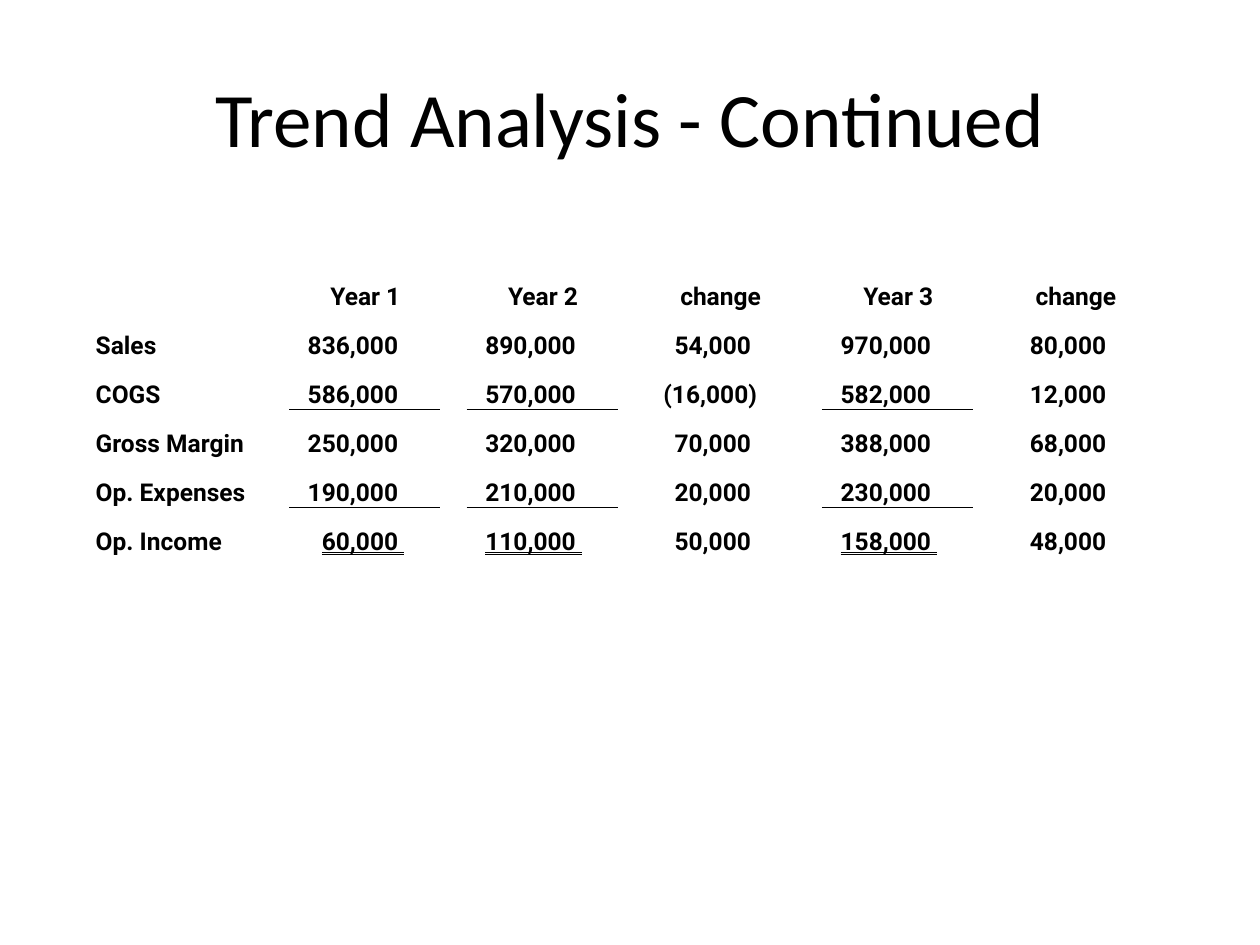
from lxml.etree import Element, SubElement
from pptx import Presentation
from pptx.dml.color import RGBColor
from pptx.enum.text import MSO_ANCHOR, MSO_UNDERLINE, PP_ALIGN
from pptx.oxml.ns import qn
from pptx.util import Inches, Pt

COLORS = {"text": "000000", "rule": "000000"}
HEADINGS = ["Year 1", "Year 2", "change", "Year 3", "change"]
STATEMENT = [
    ("Sales", [836000, 890000, 54000, 970000, 80000]),
    ("COGS", [586000, 570000, -16000, 582000, 12000]),
    ("Gross Margin", [250000, 320000, 70000, 388000, 68000]),
    ("Op. Expenses", [190000, 210000, 20000, 230000, 20000]),
    ("Op. Income", [60000, 110000, 50000, 158000, 48000]),
]
RULED_ROWS = {"COGS", "Op. Expenses"}
LABEL_WIDTH, VALUE_WIDTH, GAP_WIDTH = 1.55, 1.2, 0.21
ROW_HEIGHT = 0.39


def write(cell, text, size=14):
    paragraph = cell.text_frame.paragraphs[0]
    run = paragraph.add_run()
    run.text = text
    run.font.name = "Roboto"
    run.font.size = Pt(size)
    run.font.bold = True
    run.font.color.rgb = RGBColor.from_string(COLORS["text"])
    return paragraph, run


def add_rule(cell, side):
    """Draw a thin line on one side of a cell: a:lnT or a:lnB."""
    line = Element(qn(side), w=str(Pt(0.5)))
    fill = SubElement(line, qn("a:solidFill"))
    SubElement(fill, qn("a:srgbClr"), val=COLORS["rule"])
    cell._tc.get_or_add_tcPr().insert(0, line)


prs = Presentation()
prs.slide_width, prs.slide_height = Inches(10), Inches(7.5)
slide = prs.slides.add_slide(prs.slide_layouts[5])

title = slide.shapes.title
title.left, title.top = Inches(0.5), Inches(0.3)
title.width, title.height = Inches(9), Inches(1.25)
title.text_frame.vertical_anchor = MSO_ANCHOR.MIDDLE
heading = title.text_frame.paragraphs[0]
heading.alignment = PP_ALIGN.CENTER
heading_run = heading.add_run()
heading_run.text = "Trend Analysis - Continued"
heading_run.font.name = "Calibri"
heading_run.font.size = Pt(44)
heading_run.font.color.rgb = RGBColor.from_string(COLORS["text"])

# Narrow gap columns separate the value columns.
widths = [LABEL_WIDTH, VALUE_WIDTH] + [GAP_WIDTH, VALUE_WIDTH] * (len(HEADINGS) - 1)
row_count = len(STATEMENT) + 1
table = slide.shapes.add_table(
    row_count, len(widths), Inches(0.75), Inches(2.08),
    Inches(sum(widths)), Inches(ROW_HEIGHT * row_count)).table
table.first_row = table.horz_banding = False
for column, width in zip(table.columns, widths):
    column.width = Inches(width)
for row in table.rows:
    row.height = Inches(ROW_HEIGHT)
for cell in table.iter_cells():
    cell.fill.background()
    cell.vertical_anchor = MSO_ANCHOR.BOTTOM
    cell.margin_left = cell.margin_right = cell.margin_top = Inches(0.01)
    cell.margin_bottom = 0

for index, name in enumerate(HEADINGS):
    paragraph, _ = write(table.cell(0, 2 * index + 1), name)
    paragraph.alignment = PP_ALIGN.CENTER

for row_index, (label, values) in enumerate(STATEMENT, start=1):
    write(table.cell(row_index, 0), label)
    for index, value in enumerate(values):
        column_index = 2 * index + 1
        cell = table.cell(row_index, column_index)
        is_year = HEADINGS[index].startswith("Year")
        # Accounting format: a space stands where a closing bracket would be.
        amount = f"({-value:,})" if value < 0 else f"{value:,} "
        paragraph, run = write(cell, "\t" + amount)
        tabs = SubElement(paragraph._p.get_or_add_pPr(), qn("a:tabLst"))
        stop = Inches(0.9 if is_year else 0.88)
        SubElement(tabs, qn("a:tab"), pos=str(stop), algn="r")
        if is_year and label == "Op. Income":
            run.font.underline = MSO_UNDERLINE.DOUBLE_LINE
        if is_year and label in RULED_ROWS:
            add_rule(cell, "a:lnB")
            add_rule(table.cell(row_index + 1, column_index), "a:lnT")

prs.save("out.pptx")
